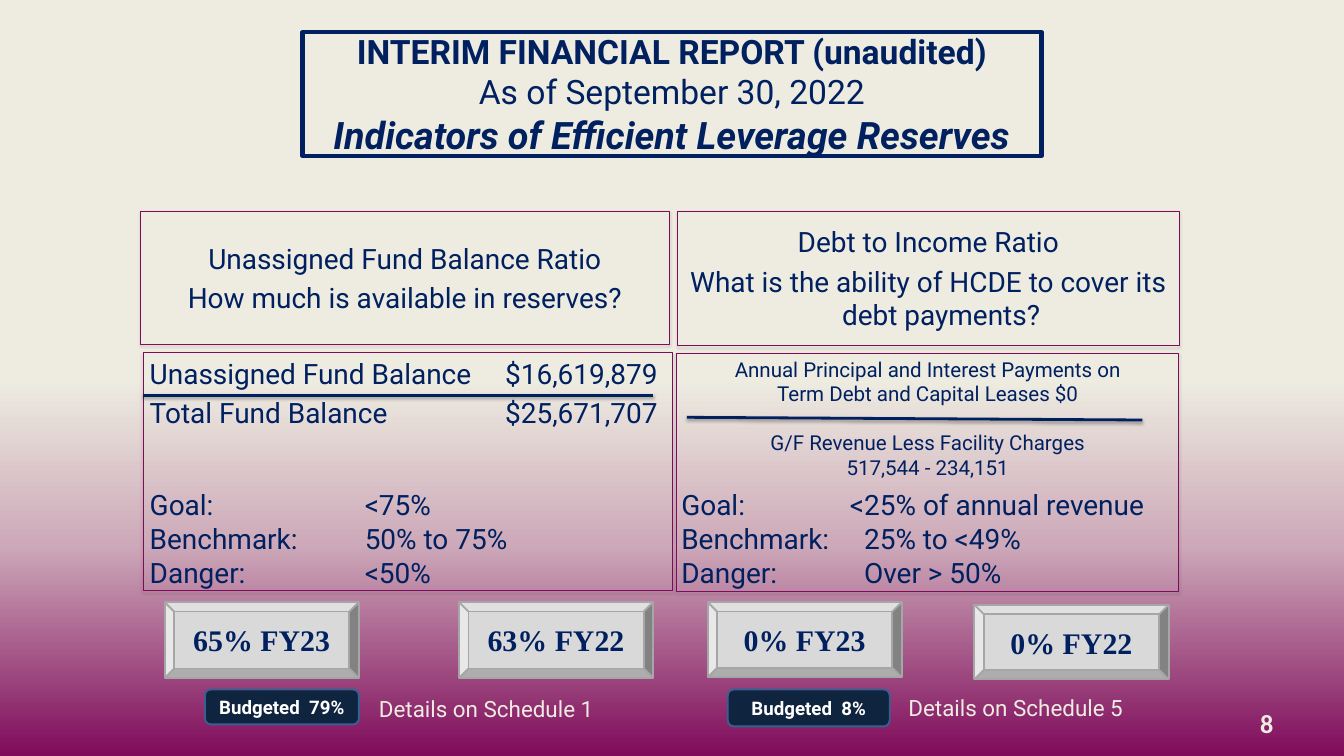
"""Build the slide on indicators of efficient leverage reserves."""
from pptx import Presentation
from pptx import util as u
from pptx.dml.color import RGBColor
from pptx.enum import shapes, text
from pptx.oxml import parse_xml
from pptx.oxml.ns import nsdecls, qn
from copy import deepcopy

COLORS = {
    "navy": "002060", "cream": "EEECE1", "rose": "CDA9B9", "plum": "7F0B5B",
    "silver": "D9D9D9", "gray": "A6A6A6", "ink": "0F243E", "blue": "376092", "white": "FFFFFF",
}
RGB = {name: RGBColor.from_string(value) for name, value in COLORS.items()}
SHADOW = (
    f'<a:effectLst {nsdecls("a")}><a:outerShdw blurRad="40000" dist="23000" dir="5400000" '
    'rotWithShape="0"><a:srgbClr val="000000"><a:alpha val="35000"/></a:srgbClr>'
    '</a:outerShdw></a:effectLst>'
)


def write(shape, lines, size, color="navy", font="Roboto", bold=False, align=text.PP_ALIGN.CENTER,
          anchor=text.MSO_ANCHOR.MIDDLE, before=0, hanging=0, tabs=()):
    """Fill a shape with one paragraph per line; tabs holds (inches, alignment) per line."""
    frame = shape.text_frame
    frame.word_wrap = True
    frame.vertical_anchor = anchor
    for index, line in enumerate(lines):
        paragraph = frame.paragraphs[0] if index == 0 else frame.add_paragraph()
        paragraph.alignment = align
        paragraph.space_before = u.Pt(before)
        properties = paragraph._p.get_or_add_pPr()
        if hanging:
            properties.set("marL", str(u.Inches(hanging)))
            properties.set("indent", str(-u.Inches(hanging)))
        if tabs:
            position, side = tabs[index]
            properties.append(parse_xml(
                f'<a:tabLst {nsdecls("a")}><a:tab pos="{u.Inches(position)}" algn="{side}"/></a:tabLst>'))
        run = paragraph.add_run()
        run.text = line
        run.font.size = u.Pt(size)
        run.font.name = font
        run.font.bold = bold
        run.font.color.rgb = RGB[color]


def add_box(kind, place, line, width, fill=None):
    """Add an outlined shape, filled with a colour or with the slide background."""
    shape = slide.shapes.add_shape(kind, *map(u.Inches, place))
    shape.shadow.inherit = False
    shape.line.color.rgb = RGB[line]
    shape.line.width = u.Pt(width)
    if fill:
        shape.fill.solid()
        shape.fill.fore_color.rgb = RGB[fill]
    else:
        shape._element.set("useBgFill", "1")
        effects = shape._element.spPr.find(qn("a:effectLst"))
        effects.getparent().replace(effects, parse_xml(SHADOW))
    return shape


presentation = Presentation()
presentation.slide_width = u.Inches(20)
presentation.slide_height = u.Inches(11.25)
slide = presentation.slides.add_slide(presentation.slide_layouts[5])

background = slide.background.fill
background.gradient()
background.gradient_angle = 270
first_stop = background.gradient_stops[0]._gs
first_stop.addnext(deepcopy(first_stop))
for stop, (position, color) in zip(
        background.gradient_stops, [(0.5, "cream"), (0.72, "rose"), (1, "plum")]):
    stop.position = position
    stop.color.rgb = RGB[color]

title = slide.shapes.title
title.left, title.top, title.width, title.height = map(u.Inches, (4.5, 0.48, 11, 1.84))
title.line.color.rgb = RGB["navy"]
title.line.width = u.Pt(4.5)
frame = title.text_frame
frame.auto_size = text.MSO_AUTO_SIZE.NONE
frame.word_wrap = True
frame.vertical_anchor = text.MSO_ANCHOR.MIDDLE
frame.margin_left = frame.margin_right = frame.margin_top = frame.margin_bottom = 0
paragraph = frame.paragraphs[0]
paragraph.alignment = text.PP_ALIGN.CENTER
for index, (words, size, bold, italic) in enumerate([
        ("INTERIM FINANCIAL REPORT (unaudited)", 36, True, False),
        ("As of September 30, 2022", 36, False, False),
        ("Indicators of Efficient Leverage Reserves", 40.5, True, True)]):
    if index:
        paragraph.add_line_break()
    run = paragraph.add_run()
    run.text = words
    run.font.size = u.Pt(size)
    run.font.name = "Roboto"
    run.font.bold = bold
    run.font.italic = italic
    run.font.color.rgb = RGB["navy"]

RECTANGLE = shapes.MSO_SHAPE.RECTANGLE
LEFT, TOP = text.PP_ALIGN.LEFT, text.MSO_ANCHOR.TOP

for place, lines in [
        ((2.09, 3.14, 7.87, 1.98),
         ["Unassigned Fund Balance Ratio", "How much is available in reserves?"]),
        ((10.08, 3.14, 7.47, 2),
         ["Debt to Income Ratio", "What is the ability of HCDE to cover its debt payments?"])]:
    write(add_box(RECTANGLE, place, "plum", 0.75), lines, 30, before=6, hanging=0.38)

balances = add_box(RECTANGLE, (2.13, 5.25, 7.87, 3.54), "plum", 0.75)
write(balances, ["Unassigned Fund Balance\t$16,619,879", "Total Fund Balance\t$25,671,707"], 30,
      align=LEFT, anchor=TOP, before=6, tabs=[(7.56, "r")] * 2)

debt = add_box(RECTANGLE, (10.07, 5.26, 7.47, 3.54), "plum", 0.75)
write(debt, ["Annual Principal and Interest Payments on", "Term Debt and Capital Leases $0",
             "G/F Revenue Less Facility Charges", "517,544 - 234,151"], 22, anchor=TOP)
debt.text_frame.paragraphs[2].space_before = u.Pt(26)

for left, top, height, label in [
        (2.45, 8.96, 1.13, "65% FY23"), (6.83, 8.96, 1.13, "63% FY22"),
        (10.53, 8.96, 1.12, "0% FY23"), (14.5, 9, 1.11, "0% FY22")]:
    result = add_box(shapes.MSO_SHAPE.BEVEL, (left, top, 2.89, height), "gray", 2, "silver")
    write(result, [label], 32, font="Times New Roman", bold=True)

for place, label in [((3.05, 10.26, 2.29, 0.52), "Budgeted  79%"),
                     ((10.83, 10.26, 2.41, 0.55), "Budgeted  8%")]:
    budget = add_box(shapes.MSO_SHAPE.ROUNDED_RECTANGLE, place, "blue", 2, "ink")
    write(budget, [label], 20, "white", bold=True)

for start_x, start_y, end_x, end_y in [(2.13, 5.88, 9.72, 5.88), (10.22, 6.21, 17, 6.25)]:
    fraction_bar = slide.shapes.add_connector(
        shapes.MSO_CONNECTOR.STRAIGHT, *map(u.Inches, (start_x, start_y, end_x, end_y)))
    fraction_bar.line.color.rgb = RGB["navy"]
    fraction_bar.line.width = u.Pt(3)
    fraction_bar._element.spPr.append(parse_xml(SHADOW))

for place, lines, tabs, size, color in [
        ((5.54, 10.3, 3.48, 0.5), ["Details on Schedule 1"], (), 24, "cream"),
        ((13.42, 10.28, 3.83, 0.5), ["Details on Schedule 5"], (), 24, "cream"),
        ((2.13, 7.21, 7.87, 1.62),
         ["Goal:\t<75%", "Benchmark:\t50% to 75%", "Danger:\t<50%"],
         [(3.2, "l")] * 3, 30, "navy"),
        ((10.04, 7.21, 7.5, 1.62),
         ["Goal:\t<25% of annual revenue", "Benchmark:\t25% to <49%", "Danger:\tOver > 50%"],
         [(2.51, "l"), (2.72, "l"), (2.72, "l")], 30, "navy")]:
    box = slide.shapes.add_textbox(*map(u.Inches, place))
    write(box, lines, size, color, align=LEFT, anchor=TOP, tabs=tabs)
    box.text_frame.auto_size = text.MSO_AUTO_SIZE.SHAPE_TO_FIT_TEXT

number = slide.shapes.add_textbox(*map(u.Inches, (18.53, 10.52, 0.42, 0.47)))
write(number, ["8"], 28, "cream", "Calibri", True, text.PP_ALIGN.RIGHT, TOP)
frame = number.text_frame
frame.margin_left = frame.margin_right = frame.margin_top = frame.margin_bottom = 0
frame.auto_size = text.MSO_AUTO_SIZE.SHAPE_TO_FIT_TEXT

presentation.save("out.pptx")
